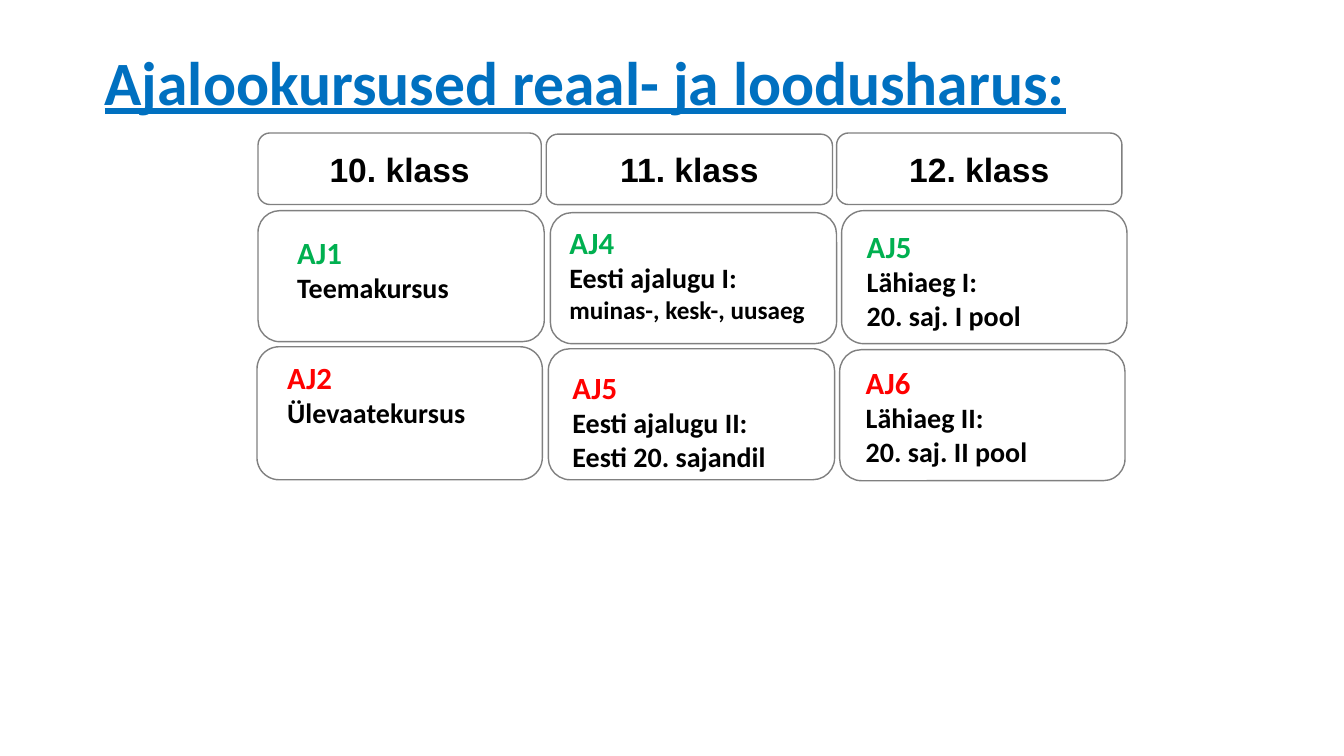
from pptx import Presentation
from pptx.dml.color import RGBColor
from pptx.enum.shapes import MSO_SHAPE
from pptx.enum.text import MSO_ANCHOR, MSO_AUTO_SIZE, PP_ALIGN
from pptx.util import Pt

ROUNDED = MSO_SHAPE.ROUNDED_RECTANGLE
MIDDLE = MSO_ANCHOR.MIDDLE
CENTER = PP_ALIGN.CENTER
GROW = MSO_AUTO_SIZE.SHAPE_TO_FIT_TEXT

COLORS = {
    "title": "0070C0",
    "text": "000000",
    "fill": "FFFFFF",
    "border": "808080",
    "first": "00B050",
    "second": "FF0000",
}

TITLE_FORMAT = {"name": "Calibri", "size": Pt(44), "bold": True, "underline": True}
GRADE_FORMAT = {"name": "Arial", "size": Pt(24), "bold": True}
CODE_FORMAT = {"name": "Calibri", "size": Pt(22), "bold": True}
TOPIC_FORMAT = {**CODE_FORMAT, "size": Pt(20)}
DETAIL_FORMAT = {**CODE_FORMAT, "size": Pt(18)}

# Grade name and its box: left, top, width, height
GRADES = [
    ("10. klass", (184.3, 95, 202.3, 51.1)),
    ("11. klass", (390.2, 95.8, 204.5, 50.4)),
    ("12. klass", (597.6, 95, 203.8, 51.1)),
]

# Card box, text box, half of the year, code, then topic lines with formats
COURSES = [
    ((184.3, 150.5, 204.5, 93.6), (205.2, 163.4, 178.6, 58.3), "first", "AJ1",
     [("Teemakursus", TOPIC_FORMAT)]),
    ((393.1, 151.9, 204.5, 93.6), (399.6, 156.2, 195.1, 79.9), "first", "AJ4",
     [("Eesti ajalugu I:", TOPIC_FORMAT), ("muinas-, kesk-, uusaeg", DETAIL_FORMAT)]),
    ((601.2, 150.5, 203.8, 95), (612, 159.1, 181.4, 82.1), "first", "AJ5",
     [("Lähiaeg I:", TOPIC_FORMAT), ("20. saj. I pool", TOPIC_FORMAT)]),
    ((183.6, 247.7, 203.8, 95), (198, 252.7, 181.4, 58.3), "second", "AJ2",
     [("Ülevaatekursus", TOPIC_FORMAT)]),
    ((391.7, 249.1, 204.5, 93.6), (401.8, 259.9, 181.4, 82.1), "second", "AJ5",
     [("Eesti ajalugu II:", TOPIC_FORMAT), ("Eesti 20. sajandil", TOPIC_FORMAT)]),
    ((599.8, 249.8, 203.8, 93.6), (611.3, 256.3, 181.4, 82.1), "second", "AJ6",
     [("Lähiaeg II:", TOPIC_FORMAT), ("20. saj. II pool", TOPIC_FORMAT)]),
]


def color(key):
    return RGBColor.from_string(COLORS[key])


def write_line(paragraph, text, font_format, color_key="text"):
    run = paragraph.add_run()
    run.text = text
    for attribute, value in font_format.items():
        setattr(run.font, attribute, value)
    run.font.color.rgb = color(color_key)


def add_text_frame(slide, box):
    frame = slide.shapes.add_textbox(*map(Pt, box)).text_frame
    frame.word_wrap = True
    return frame


def add_title(slide, text):
    frame = add_text_frame(slide, (67.7, 8.6, 828, 104.4))
    frame.vertical_anchor = MIDDLE
    paragraph = frame.paragraphs[0]
    paragraph.line_spacing = 0.9
    write_line(paragraph, text, TITLE_FORMAT, "title")


def add_card(slide, box):
    card = slide.shapes.add_shape(ROUNDED, *map(Pt, box))
    card.shadow.inherit = False
    card.fill.solid()
    card.fill.fore_color.rgb = color("fill")
    card.line.color.rgb = color("border")
    card.line.width = Pt(1)
    return card


def add_grade(slide, name, box):
    frame = add_card(slide, box).text_frame
    frame.vertical_anchor = MIDDLE
    paragraph = frame.paragraphs[0]
    paragraph.alignment = CENTER
    write_line(paragraph, name, GRADE_FORMAT)


def add_course(slide, card_box, text_box, half, code, topics):
    add_card(slide, card_box)
    frame = add_text_frame(slide, text_box)
    frame.auto_size = GROW
    write_line(frame.paragraphs[0], code, CODE_FORMAT, half)
    for topic, font_format in topics:
        write_line(frame.add_paragraph(), topic, font_format)


def main():
    presentation = Presentation()
    presentation.slide_width = Pt(960)
    presentation.slide_height = Pt(540)
    slide = presentation.slides.add_slide(presentation.slide_layouts[6])
    add_title(slide, "Ajalookursused reaal- ja loodusharus:")
    for grade in GRADES:
        add_grade(slide, *grade)
    for course in COURSES:
        add_course(slide, *course)
    presentation.save("out.pptx")


if __name__ == "__main__":
    main()
